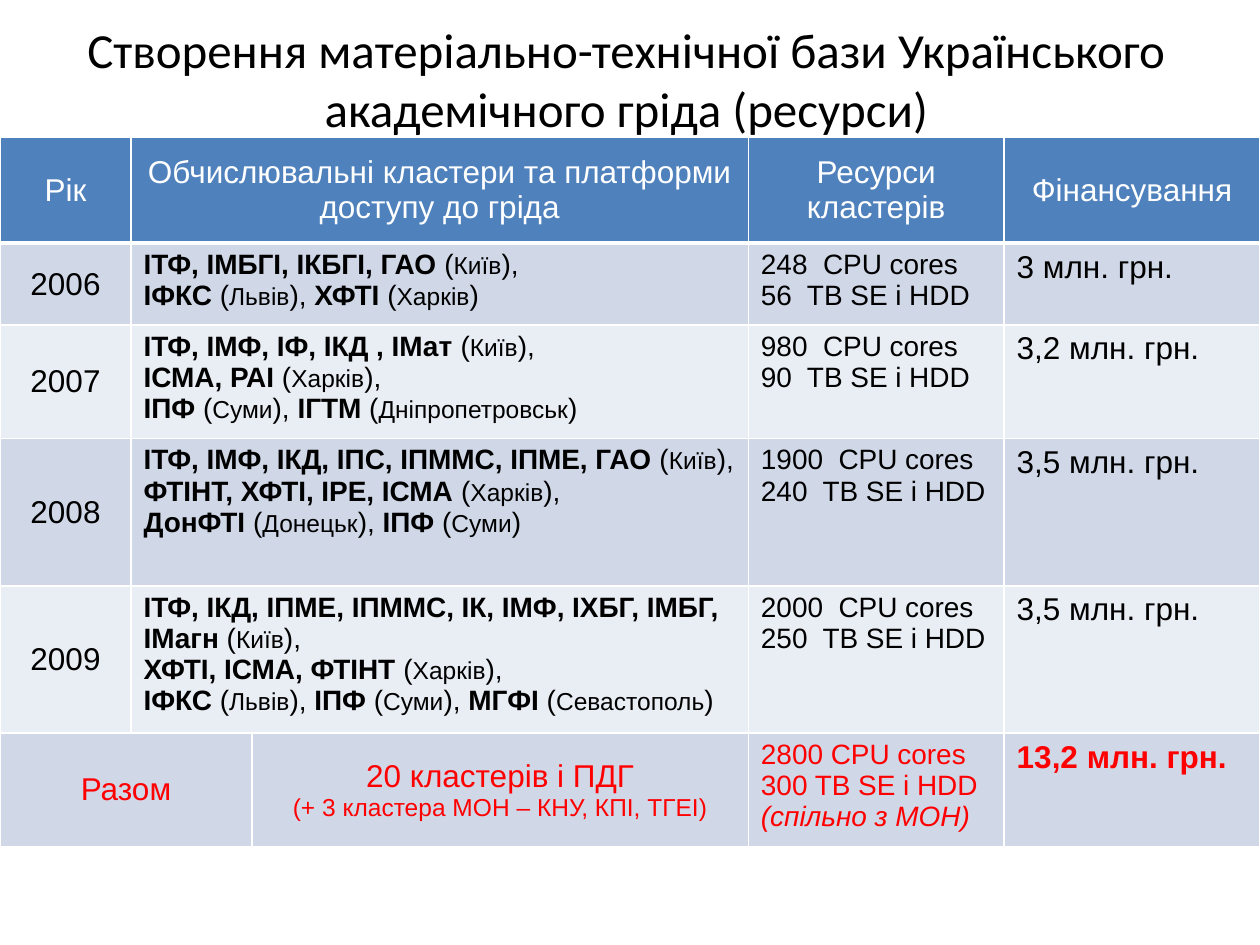
import pptx
import pptx.chart.data
import pptx.dml.color
import pptx.enum.text
import pptx.oxml
import pptx.oxml.ns
import pptx.util
from dataclasses import dataclass

Inches, Pt = pptx.util.Inches, pptx.util.Pt
RGBColor = pptx.dml.color.RGBColor
ALIGN, ANCHOR = pptx.enum.text.PP_ALIGN, pptx.enum.text.MSO_ANCHOR


@dataclass(frozen=True)
class Theme:
    title_font: str = "Calibri"
    table_font: str = "Arial"
    title_size: int = 28
    large: int = 18
    medium: int = 16
    small: int = 14
    text: str = "000000"
    header_text: str = "FFFFFF"
    total_text: str = "FF0000"
    header_fill: str = "4F81BD"
    bands: tuple = ("D0D8E8", "E9EDF4")
    border: str = "FFFFFF"
    border_width: int = 1
    header_rule: int = 3


THEME = Theme()

TITLE = "Створення матеріально-технічної бази Українського академічного гріда (ресурси)"
HEADERS = ["Рік", "Обчислювальні кластери та платформи доступу до гріда",
           "Ресурси кластерів", "Фінансування"]

# Year, lines of (institutes, city), resources, funding
YEARS = [
    ("2006",
     [[("ІТФ, ІМБГІ, ІКБГІ, ГАО", "Київ")],
      [("ІФКС", "Львів"), ("ХФТІ", "Харків")]],
     ["248  СPU cores", "56  TB SE і HDD"], "3 млн. грн."),
    ("2007",
     [[("ІТФ, ІМФ, ІФ, ІКД , ІМат", "Київ")],
      [("ІСМА, РАІ", "Харків")],
      [("ІПФ", "Суми"), ("ІГТМ", "Дніпропетровськ")]],
     ["980  СPU cores", "90  TB SE і HDD"], "3,2 млн. грн."),
    ("2008",
     [[("ІТФ, ІМФ, ІКД, ІПС, ІПММС, ІПМЕ, ГАО", "Київ")],
      [("ФТІНТ, ХФТІ, ІРЕ, ІСМА", "Харків")],
      [("ДонФТІ", "Донецьк"), ("ІПФ", "Суми")]],
     ["1900  СPU cores", "240  TB SE і HDD"], "3,5 млн. грн."),
    ("2009",
     [[("ІТФ, ІКД, ІПМЕ, ІПММС, ІК, ІМФ, ІХБГ, ІМБГ, ІМагн", "Київ")],
      [("ХФТІ, ІСМА, ФТІНТ", "Харків")],
      [("ІФКС", "Львів"), ("ІПФ", "Суми"), ("МГФІ", "Севастополь")]],
     ["2000  СPU cores", "250  TB SE і HDD"], "3,5 млн. грн."),
]
TOTAL_LABEL = "Разом"
TOTAL_CLUSTERS = ["20 кластерів і ПДГ", "(+ 3 кластера МОН – КНУ, КПІ, ТГЕІ)"]
TOTAL_RESOURCES = ["2800 СPU cores", "300 TB SE і HDD", "(спільно з МОН)"]
TOTAL_FUNDING = "13,2 млн. грн."

COLUMN_WIDTHS = [1.04, 0.96, 3.94, 2.03, 2.03]
ROW_HEIGHTS = [0.84, 0.65, 0.9, 1.17, 1.17, 0.9]
TABLE_TOP = 1.09
YEAR_COLUMNS = [0, 1, 3, 4]   # clusters span columns 1 and 2
TOTAL_COLUMNS = [0, 2, 3, 4]  # the total label spans columns 0 and 1


def run(text, size=THEME.large, bold=False, italic=False):
    return text, size, bold, italic


def plain(lines, size=THEME.large):
    return [[run(line, size)] for line in lines]


def cluster_lines(lines):
    """Bold institutes, each followed by its city in smaller type."""
    paragraphs = []
    for number, line in enumerate(lines, 1):
        runs = []
        for place, (institutes, city) in enumerate(line, 1):
            if place < len(line):
                closing = "), "
            else:
                closing = ")," if number < len(lines) else ")"
            runs += [run(institutes, THEME.medium, bold=True), run(" (", THEME.medium),
                     run(city, THEME.small), run(closing, THEME.medium)]
        paragraphs.append(runs)
    return paragraphs


def add_runs(paragraph, runs, font_name, color):
    for text, size, bold, italic in runs:
        part = paragraph.add_run()
        part.text = text
        part.font.name = font_name
        part.font.size = Pt(size)
        part.font.bold, part.font.italic = bold, italic
        part.font.color.rgb = RGBColor.from_string(color)


def write_cell(cell, paragraphs, color, centred):
    cell.vertical_anchor = ANCHOR.MIDDLE if centred else ANCHOR.TOP
    frame = cell.text_frame
    for index, runs in enumerate(paragraphs):
        paragraph = frame.add_paragraph() if index else frame.paragraphs[0]
        paragraph.alignment = ALIGN.CENTER if centred else ALIGN.LEFT
        add_runs(paragraph, runs, THEME.table_font, color)


def style_cell(cell, row):
    cell.fill.solid()
    fill = THEME.bands[(row - 1) % 2] if row else THEME.header_fill
    cell.fill.fore_color.rgb = RGBColor.from_string(fill)
    widths = dict.fromkeys(("lnL", "lnR", "lnT", "lnB"), THEME.border_width)
    if row < 2:
        widths["lnT" if row else "lnB"] = THEME.header_rule
    properties = cell._tc.get_or_add_tcPr()
    for index, (side, width) in enumerate(widths.items()):
        properties.insert(index, pptx.oxml.parse_xml(
            f'<a:{side} {pptx.oxml.ns.nsdecls("a")} w="{Pt(width)}"><a:solidFill>'
            f'<a:srgbClr val="{THEME.border}"/></a:solidFill></a:{side}>'))


def add_title(slide):
    title = slide.shapes.title
    title.left, title.top = Inches(0.47), Inches(0)
    title.width, title.height = Inches(9), Inches(1.25)
    title.text_frame.vertical_anchor = ANCHOR.MIDDLE
    paragraph = title.text_frame.paragraphs[0]
    paragraph.alignment = ALIGN.CENTER
    add_runs(paragraph, [run(TITLE, THEME.title_size)], THEME.title_font, THEME.text)


def add_resources_table(slide):
    table = slide.shapes.add_table(
        len(ROW_HEIGHTS), len(COLUMN_WIDTHS), Inches(0), Inches(TABLE_TOP),
        Inches(sum(COLUMN_WIDTHS)), Inches(sum(ROW_HEIGHTS))).table
    for column, width in zip(table.columns, COLUMN_WIDTHS):
        column.width = Inches(width)
    for index, height in enumerate(ROW_HEIGHTS):
        table.rows[index].height = Inches(height)
        for column in range(len(COLUMN_WIDTHS)):
            style_cell(table.cell(index, column), index)

    total_row = len(ROW_HEIGHTS) - 1
    for row in range(total_row):
        table.cell(row, 1).merge(table.cell(row, 2))
    table.cell(total_row, 0).merge(table.cell(total_row, 1))

    for column, header in zip(YEAR_COLUMNS, HEADERS):
        write_cell(table.cell(0, column), plain([header]), THEME.header_text, True)

    for row, (year, clusters, resources, funding) in enumerate(YEARS, 1):
        contents = [plain([year]), cluster_lines(clusters),
                    plain(resources, THEME.medium), plain([funding])]
        for column, content in zip(YEAR_COLUMNS, contents):
            write_cell(table.cell(row, column), content, THEME.text, column == 0)

    totals = [
        plain([TOTAL_LABEL]),
        plain(TOTAL_CLUSTERS[:1]) + plain(TOTAL_CLUSTERS[1:], THEME.small),
        plain(TOTAL_RESOURCES[:2], THEME.medium)
        + [[run(TOTAL_RESOURCES[2], THEME.medium, italic=True)]],
        [[run(TOTAL_FUNDING, bold=True)]],
    ]
    for column, content in zip(TOTAL_COLUMNS, totals):
        write_cell(table.cell(total_row, column), content, THEME.total_text, column < 3)


def main():
    presentation = pptx.Presentation()
    presentation.slide_width, presentation.slide_height = Inches(10), Inches(7.5)
    slide = presentation.slides.add_slide(presentation.slide_layouts[5])
    add_title(slide)
    add_resources_table(slide)
    presentation.save("out.pptx")


if __name__ == "__main__":
    main()
